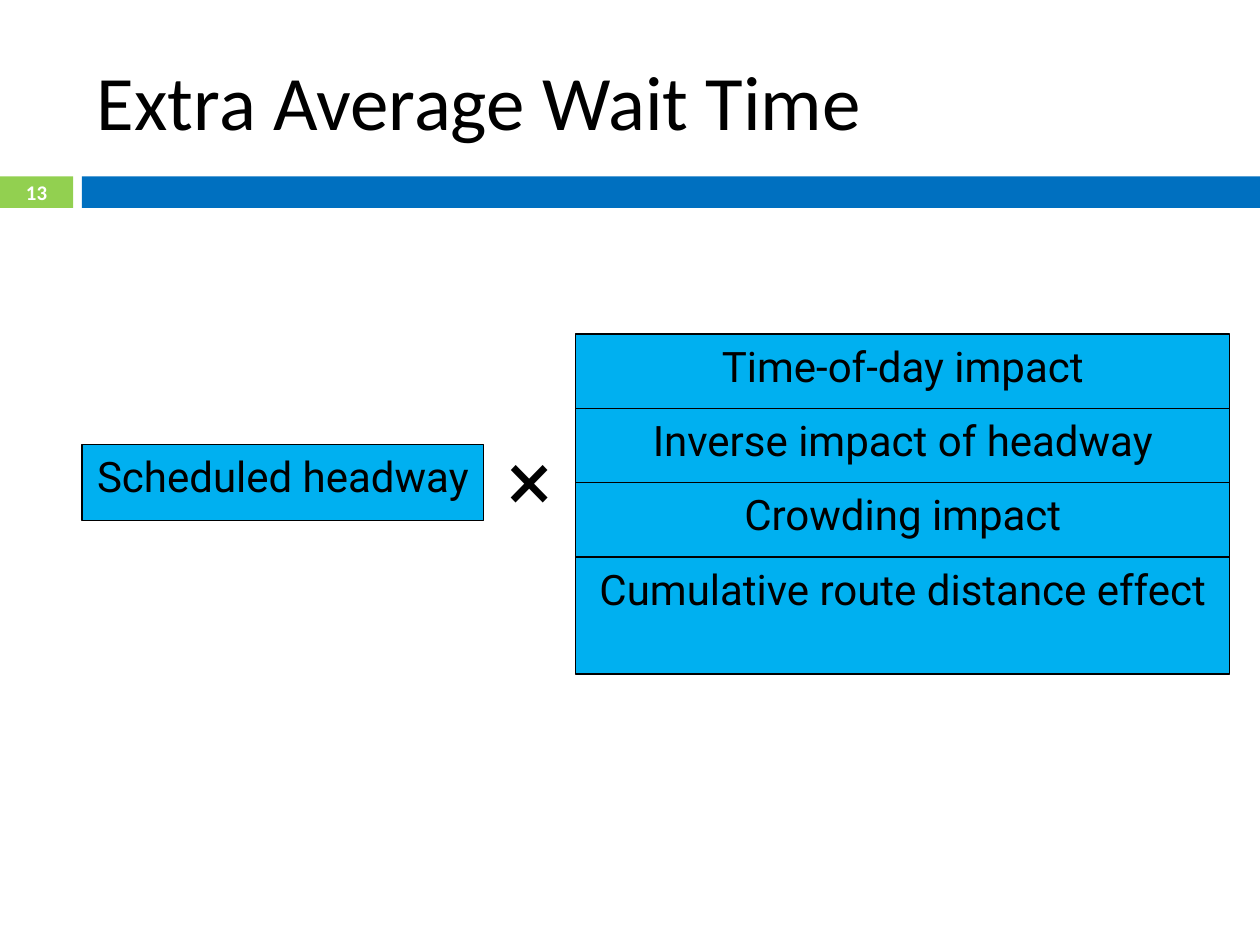
from pptx import Presentation
from pptx.dml.color import RGBColor
from pptx.enum import shapes, text
from pptx.util import Inches, Pt

# Content
TITLE = "Extra Average Wait Time"
PAGE_NUMBER = "13"
BASE_TERM = "Scheduled headway"
OPERATOR = "×"
FACTORS = [  # label, height
    ("Time-of-day impact", 0.59),
    ("Inverse impact of headway", 0.59),
    ("Crowding impact", 0.59),
    ("Cumulative route distance effect", 0.93),
]

# Colours and layout
BLACK = RGBColor(0x00, 0x00, 0x00)
WHITE = RGBColor(0xFF, 0xFF, 0xFF)
GREEN = RGBColor(0x92, 0xD0, 0x50)
BLUE = RGBColor(0x00, 0x70, 0xC0)
SKY = RGBColor(0x00, 0xB0, 0xF0)
WIDTH, HEIGHT = 10, 7.5
BAND_TOP, BAND_HEIGHT = 1.4, 0.25
NUMBER_WIDTH, CONTENT_LEFT = 0.58, 0.65
FACTOR_LEFT, FACTOR_TOP, FACTOR_WIDTH = 4.57, 2.65, 5.19

HEADING = dict(name="Calibri", size=Pt(44))
NUMBER = dict(name="Calibri", size=Pt(11.9), bold=True)
TERM = dict(name="Roboto", size=Pt(24))
SIGN = dict(name="Roboto", size=Pt(48))


def add_rectangle(slide, box, fill, outlined=False):
    shape = slide.shapes.add_shape(shapes.MSO_SHAPE.RECTANGLE, *map(Inches, box))
    shape.shadow.inherit = False
    shape.fill.solid()
    shape.fill.fore_color.rgb = fill
    if outlined:
        shape.line.color.rgb = BLACK
        shape.line.width = Pt(0.75)
    else:
        shape.line.fill.background()
    return shape


def write(shape, words, font, color=BLACK, align=text.PP_ALIGN.CENTER,
          anchor=text.MSO_ANCHOR.TOP, wrap=False):
    frame = shape.text_frame
    frame.word_wrap = wrap
    frame.vertical_anchor = anchor
    paragraph = frame.paragraphs[0]
    paragraph.alignment = align
    run = paragraph.add_run()
    run.text = words
    run.font.color.rgb = color
    for name, value in font.items():
        setattr(run.font, name, value)


def add_term(slide, words, box):
    write(add_rectangle(slide, box, SKY, outlined=True), words, TERM)


def main():
    presentation = Presentation()
    presentation.slide_width = Inches(WIDTH)
    presentation.slide_height = Inches(HEIGHT)
    slide = presentation.slides.add_slide(presentation.slide_layouts[6])

    # Band with the page number
    number = add_rectangle(slide, (0, BAND_TOP, NUMBER_WIDTH, BAND_HEIGHT), GREEN)
    number.text_frame.margin_top = number.text_frame.margin_bottom = 0
    write(number, PAGE_NUMBER, NUMBER, WHITE, anchor=text.MSO_ANCHOR.MIDDLE)
    add_rectangle(slide, (CONTENT_LEFT, BAND_TOP, WIDTH - CONTENT_LEFT, BAND_HEIGHT), BLUE)

    # Title
    title = slide.shapes.add_textbox(*map(Inches, (0.67, 0.25, 8.92, 1.08)))
    write(title, TITLE, HEADING, align=text.PP_ALIGN.LEFT,
          anchor=text.MSO_ANCHOR.MIDDLE, wrap=True)

    # Base term and multiplication sign
    add_term(slide, BASE_TERM, (CONTENT_LEFT, 3.53, 3.19, 0.6))
    sign = slide.shapes.add_textbox(*map(Inches, (3.86, 3.34, 0.69, 0.91)))
    write(sign, OPERATOR, SIGN)

    # Stack of factors
    top = FACTOR_TOP
    for words, height in FACTORS:
        add_term(slide, words, (FACTOR_LEFT, top, FACTOR_WIDTH, height))
        top += height

    presentation.save("out.pptx")


if __name__ == "__main__":
    main()
